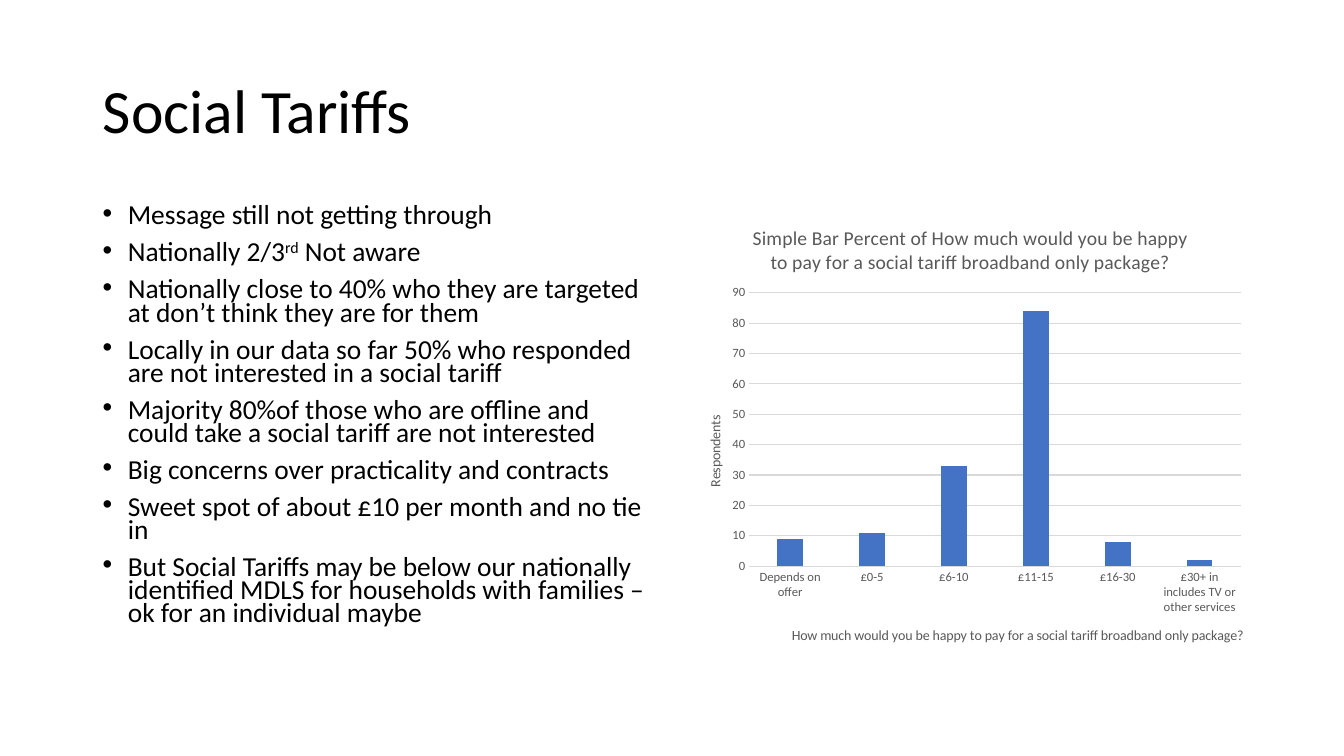
"""Build the Social Tariffs slide with its bullet list and column chart."""
from dataclasses import dataclass

from lxml.etree import SubElement
from pptx import Presentation
from pptx.chart.data import CategoryChartData
from pptx.dml.color import RGBColor
from pptx.enum.chart import XL_CHART_TYPE as ChartType, XL_TICK_MARK as TickMark
from pptx.enum.text import MSO_ANCHOR as Anchor
from pptx.oxml import parse_xml
from pptx.oxml.ns import nsdecls, qn
from pptx.util import Inches, Pt

TITLE = "Social Tariffs"
BULLETS = [
    ["Message still not getting through"],
    ["Nationally 2/3", ("rd", 30000), " Not aware"],
    ["Nationally close to 40% who they are targeted at don’t think they are for them"],
    ["Locally in our data so far 50% who responded are not interested in a social tariff"],
    ["Majority 80%of those who are offline and could take a social tariff are not interested"],
    ["Big concerns over practicality and contracts"],
    ["Sweet spot of about £10 per month and no tie in"],
    ["But Social Tariffs may be below our nationally identified MDLS for households "
     "with families – ok for an individual maybe"],
]
QUESTION = "How much would you be happy to pay for a social tariff broadband only package?"
CHART_TITLE = f"Simple Bar Percent of {QUESTION}"
VALUE_TITLE = "Respondents"
RESPONSES = {
    "Depends on offer": 9,
    "£0-5": 11,
    "£6-10": 33,
    "£11-15": 84,
    "£16-30": 8,
    "£30+ in includes TV or other services": 2,
}


@dataclass(frozen=True)
class Theme:
    font: str = "Calibri"
    text: RGBColor = RGBColor(0, 0, 0)
    muted: RGBColor = RGBColor(0x59, 0x59, 0x59)
    grid: RGBColor = RGBColor(0xD9, 0xD9, 0xD9)
    bar: RGBColor = RGBColor(0x44, 0x72, 0xC4)
    title_size: float = 44
    body_size: float = 19.6
    chart_title_size: float = 14
    axis_title_size: float = 10
    label_size: float = 9


THEME = Theme()
MARGIN, COLUMN_TOP = 0.92, 2
COLUMN_WIDTH, COLUMN_HEIGHT, COLUMN_GAP = 5.67, 4.76, 0.16


def style_font(font, size, color):
    font.name = THEME.font
    font.size = Pt(size)
    font.bold = False
    font.color.rgb = color


def add_run(paragraph, text, size, color):
    run = paragraph.add_run()
    run.text = text
    style_font(run.font, size, color)
    return run


def add_title(slide):
    title = slide.shapes.title
    title.left, title.top = Inches(MARGIN), Inches(0.4)
    title.width, title.height = Inches(11.5), Inches(1.45)
    title.text_frame.vertical_anchor = Anchor.MIDDLE
    paragraph = title.text_frame.paragraphs[0]
    paragraph.alignment = 1
    paragraph.line_spacing = 0.9
    add_run(paragraph, TITLE, THEME.title_size, THEME.text)


def add_bullets(slide):
    box = slide.shapes.add_textbox(
        Inches(MARGIN), Inches(COLUMN_TOP), Inches(COLUMN_WIDTH), Inches(COLUMN_HEIGHT))
    frame = box.text_frame
    frame.word_wrap = True
    for index, pieces in enumerate(BULLETS):
        paragraph = frame.add_paragraph() if index else frame.paragraphs[0]
        paragraph.line_spacing = 0.7
        paragraph.space_before = Pt(10)
        properties = paragraph._p.get_or_add_pPr()
        properties.set("marL", str(Inches(0.25)))
        properties.set("indent", str(-Inches(0.25)))
        SubElement(properties, qn("a:buFont"), typeface="Arial")
        SubElement(properties, qn("a:buChar"), char="•")
        for piece in pieces:
            text, baseline = (piece, 0) if isinstance(piece, str) else piece
            run = add_run(paragraph, text, THEME.body_size, THEME.text)
            if baseline:
                run.font._element.set("baseline", str(baseline))


def place(element, inner=False, **fractions):
    for layout in element.findall(qn("c:layout")):
        element.remove(layout)
    layout = parse_xml(f"<c:layout {nsdecls('c')}/>")
    manual = SubElement(layout, qn("c:manualLayout"))
    if inner:
        SubElement(manual, qn("c:layoutTarget"), val="inner")
    for axis in ("x", "y"):
        SubElement(manual, qn(f"c:{axis}Mode"), val="edge")
    for name, value in fractions.items():
        SubElement(manual, qn(f"c:{name}"), val=str(value))
    text = element.find(qn("c:tx"))
    element.insert(0 if text is None else 1, layout)


def set_title(title, text, size, x, y):
    add_run(title.text_frame.paragraphs[0], text, size, THEME.muted)
    place(title._element, x=x, y=y)


def add_chart(slide):
    data = CategoryChartData()
    data.categories = list(RESPONSES)
    data.add_series("Series 1", list(RESPONSES.values()))
    chart = slide.shapes.add_chart(
        ChartType.COLUMN_CLUSTERED, Inches(MARGIN + COLUMN_WIDTH + COLUMN_GAP),
        Inches(COLUMN_TOP), Inches(COLUMN_WIDTH), Inches(COLUMN_HEIGHT), data).chart
    chart.has_legend = False
    style_font(chart.font, THEME.axis_title_size, THEME.text)
    chart.has_title = True
    set_title(chart.chart_title, CHART_TITLE, THEME.chart_title_size, 0.12, 0.04)

    plot = chart.plots[0]
    plot.vary_by_categories = False
    plot.gap_width, plot.overlap = 219, -27
    fill = plot.series[0].format.fill
    fill.solid()
    fill.fore_color.rgb = THEME.bar

    categories, values = chart.category_axis, chart.value_axis
    for axis, text, x, y in ((categories, QUESTION, 0.19, 0.88),
                             (values, VALUE_TITLE, 0.04, 0.44)):
        axis.major_tick_mark = axis.minor_tick_mark = TickMark.NONE
        style_font(axis.tick_labels.font, THEME.label_size, THEME.muted)
        set_title(axis.axis_title, text, THEME.axis_title_size, x, y)
    values.axis_title.text_frame._txBody.bodyPr.set("rot", "-5400000")
    values.axis_title.text_frame._txBody.bodyPr.set("vert", "horz")
    values.minimum_scale, values.maximum_scale, values.major_unit = 0, 90, 10
    values.format.line.fill.background()
    values.has_major_gridlines = True
    for line in (categories.format.line, values.major_gridlines.format.line):
        line.color.rgb = THEME.grid
        line.width = Pt(0.75)
    plot_area = chart._chartSpace.find(f".//{qn('c:plotArea')}")
    place(plot_area, inner=True, x=0.12, y=0.19, w=0.86, h=0.57)


def main():
    presentation = Presentation()
    presentation.slide_width, presentation.slide_height = Inches(13.33), Inches(7.5)
    slide = presentation.slides.add_slide(presentation.slide_layouts[5])
    add_title(slide)
    add_bullets(slide)
    add_chart(slide)
    presentation.save("out.pptx")


if __name__ == "__main__":
    main()
